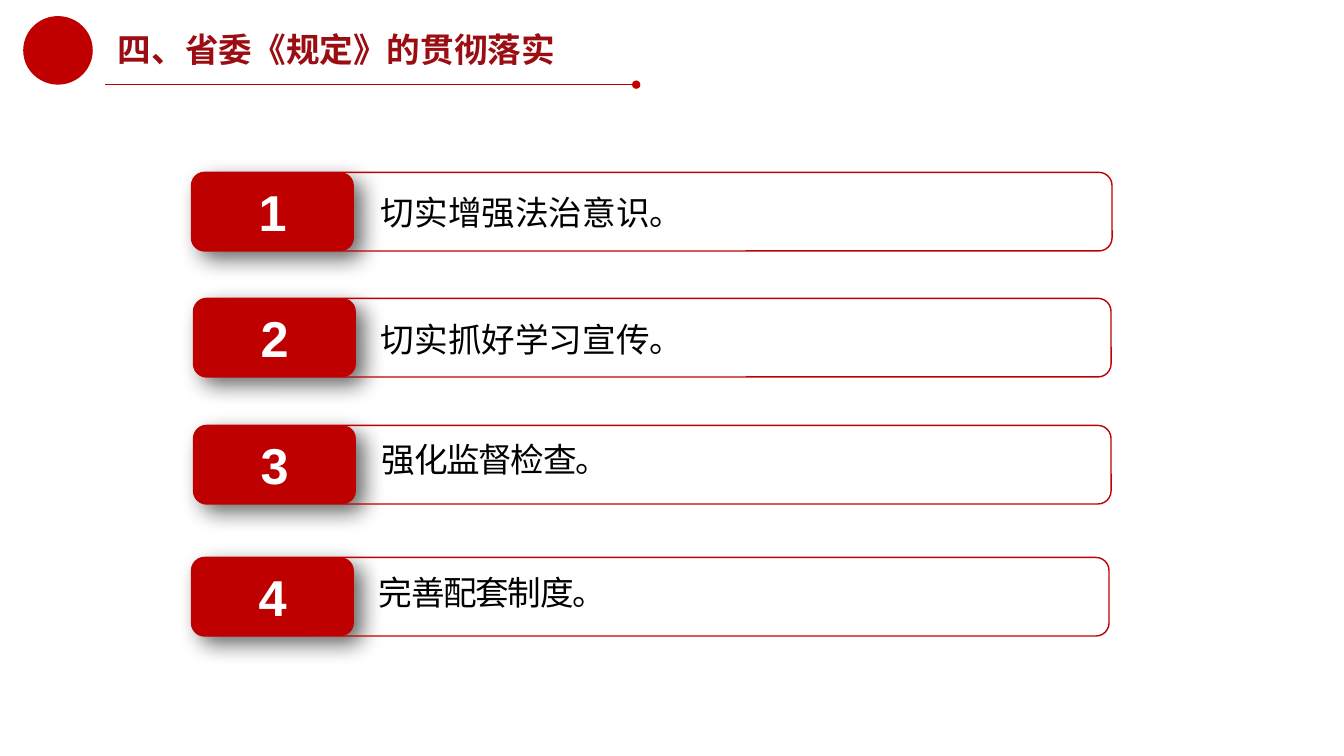
from lxml import etree
from pptx import Presentation
from pptx.dml.color import RGBColor
from pptx.enum import shapes, text
from pptx.oxml import ns
from pptx.util import Inches, Pt


def color(value):
    return RGBColor.from_string(value)


def add_xml(parent, tag, **attributes):
    return etree.SubElement(parent, ns.qn(tag), attributes)


RED = "BE0000"
LINE_RED = "C00000"
BADGE_WIDTH, ROW_HEIGHT = 1.61, 0.78

deck = Presentation()
deck.slide_width, deck.slide_height = Inches(13.33), Inches(7.5)
page = deck.slides.add_slide(deck.slide_layouts[5])

# Title
title = page.shapes.title
title.left, title.top = Inches(1.07), Inches(0.28)
title.width, title.height = Inches(10.92), Inches(0.49)
frame = title.text_frame
frame.text = "四、省委《规定》的贯彻落实"
frame.vertical_anchor = text.MSO_ANCHOR.TOP
frame.auto_size = text.MSO_AUTO_SIZE.NONE
para = frame.paragraphs[0]
para.alignment = text.PP_ALIGN.LEFT
para.line_spacing = 0.9
para.font.name = "Noto Sans CJK SC"
para.font.size = Pt(24)
para.font.bold = True
para.font.color.rgb = color("9B0D13")

# Header emblem spot and rule with a round end
emblem = page.shapes.add_shape(
    shapes.MSO_SHAPE.OVAL, Inches(0.23), Inches(0.16), Inches(0.69), Inches(0.68))
emblem.shadow.inherit = False
emblem.fill.solid()
emblem.fill.fore_color.rgb = color(LINE_RED)
emblem.line.fill.background()

rule = page.shapes.add_connector(
    shapes.MSO_CONNECTOR.STRAIGHT, Inches(1.04), Inches(0.84), Inches(6.31), Inches(0.84))
rule.line.color.rgb = color(LINE_RED)
rule.line.width = Pt(0.75)
add_xml(rule.line._get_or_add_ln(), "a:tailEnd", type="oval")
add_xml(rule._element.spPr, "a:effectLst")

# Numbered rows: left, top, card width, label left, label top, letter spacing, label
rows = [
    (1.90, 1.71, 9.13, 3.68, 1.85, 0, "切实增强法治意识。"),
    (1.92, 2.96, 9.10, 3.68, 3.11, 0, "切实抓好学习宣传。"),
    (1.92, 4.22, 9.10, 3.69, 4.31, -100, "强化监督检查。"),
    (1.90, 5.53, 9.10, 3.66, 5.62, -100, "完善配套制度。"),
]
for number, (left, top, width, label_left, label_top, spacing, label) in enumerate(rows, 1):
    # Red badge with a soft shadow
    badge = page.shapes.add_shape(
        shapes.MSO_SHAPE.ROUNDED_RECTANGLE,
        Inches(left), Inches(top), Inches(BADGE_WIDTH), Inches(ROW_HEIGHT))
    badge.fill.solid()
    badge.fill.fore_color.rgb = color(RED)
    badge.line.fill.background()
    badge.shadow.inherit = False
    effects = badge._element.spPr.find(ns.qn("a:effectLst"))
    shadow = add_xml(effects, "a:outerShdw", blurRad=str(Pt(16)), dist=str(Pt(8)),
                     dir="2700000", algn="tl", rotWithShape="0")
    add_xml(add_xml(shadow, "a:srgbClr", val="000000"), "a:alpha", val="60000")
    badge.text_frame.text = str(number)
    badge.text_frame.vertical_anchor = text.MSO_ANCHOR.MIDDLE
    para = badge.text_frame.paragraphs[0]
    para.alignment = text.PP_ALIGN.CENTER
    para.font.name = "Arial"
    para.font.size = Pt(36)
    para.font.bold = True
    para.font.color.rgb = color("FFFFFF")

    # Outline around the whole row
    card = page.shapes.add_shape(
        shapes.MSO_SHAPE.ROUNDED_RECTANGLE,
        Inches(left), Inches(top), Inches(width), Inches(ROW_HEIGHT))
    card.shadow.inherit = False
    card.fill.background()
    card.line.color.rgb = color(RED)
    card.line.width = Pt(1)

    # Label
    box = page.shapes.add_textbox(
        Inches(label_left), Inches(label_top), Inches(7.1), Inches(0.5))
    box.text_frame.word_wrap = True
    para = box.text_frame.paragraphs[0]
    span = para.add_run()
    span.text = label
    if spacing:
        span.font._element.set("spc", str(spacing))
    para.font.name = "Arial"
    para.font.size = Pt(24)
    para.font.color.rgb = color("000000")

deck.save("out.pptx")
